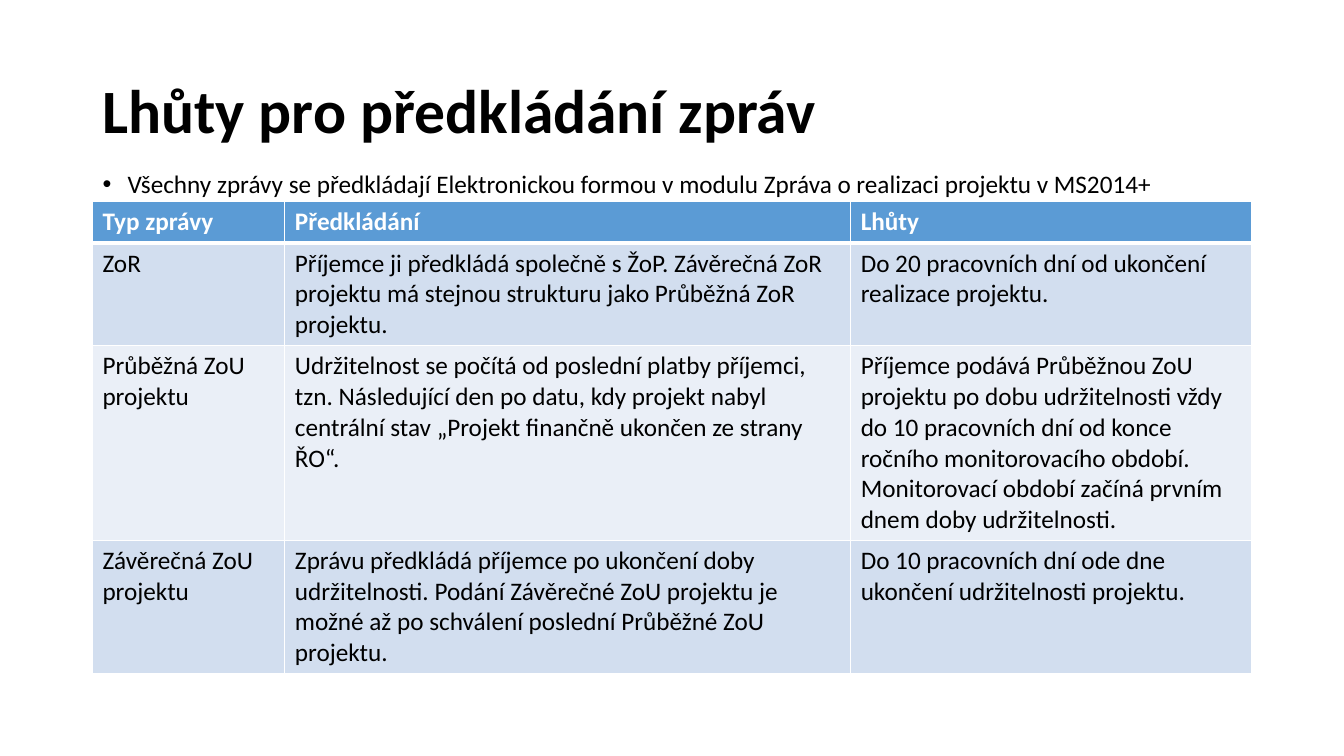
from lxml.etree import SubElement
from pptx import Presentation
from pptx.dml.color import RGBColor as RGB
from pptx.enum.text import MSO_ANCHOR as Anchor, MSO_AUTO_SIZE as AutoSize, PP_ALIGN as Align
from pptx.oxml.ns import qn
from pptx.util import Inches, Pt

COLORS = {"text": "000000", "light": "FFFFFF", "header": "5B9BD5", "odd": "D2DEEF", "even": "EAEFF7"}
FONT = "Calibri"
WIDTH, HEIGHT = Inches(13.33), Inches(7.5)
LEFT, SPAN = 6.88, 86.25
COLUMNS = [14.32, 42.1, 29.83]
ROWS = [5.47, 13.6, 25.7, 17.6]

DEADLINES = [
    ("Typ zprávy", "Předkládání", "Lhůty"),
    ("ZoR",
     "Příjemce ji předkládá společně s ŽoP. Závěrečná ZoR projektu má stejnou strukturu "
     "jako Průběžná ZoR projektu.",
     "Do 20 pracovních dní od ukončení realizace projektu."),
    ("Průběžná ZoU projektu",
     "Udržitelnost se počítá od poslední platby příjemci, tzn. Následující den po datu, "
     "kdy projekt nabyl centrální stav „Projekt finančně ukončen ze strany ŘO“.",
     "Příjemce podává Průběžnou ZoU projektu po dobu udržitelnosti vždy do 10 pracovních dní "
     "od konce ročního monitorovacího období. Monitorovací období začíná prvním dnem doby "
     "udržitelnosti."),
    ("Závěrečná ZoU projektu",
     "Zprávu předkládá příjemce po ukončení doby udržitelnosti. Podání Závěrečné ZoU projektu "
     "je možné až po schválení poslední Průběžné ZoU projektu.",
     "Do 10 pracovních dní ode dne ukončení udržitelnosti projektu."),
]


class SlideBuilder:
    def __init__(self, s):
        self.s = s

    def x(self, percent):
        return int(WIDTH * percent / 100)

    def y(self, percent):
        return int(HEIGHT * percent / 100)

    def box(self, left, top, width, height):
        return self.x(left), self.y(top), self.x(width), self.y(height)

    def run(self, p, text, size=18, color="text", bold=False):
        r = p.add_run()
        r.text = text
        r.font.name, r.font.size, r.font.bold = FONT, Pt(size), bold
        r.font.color.rgb = RGB.from_string(COLORS[color])

    def placeholder(self, index, box, anchor):
        sp = self.s.placeholders[index]
        sp.left, sp.top, sp.width, sp.height = self.box(*box)
        tf = sp.text_frame
        tf.word_wrap, tf.auto_size, tf.vertical_anchor = True, AutoSize.NONE, anchor
        p = tf.paragraphs[0]
        p.alignment, p.line_spacing, p.space_before = Align.LEFT, 0.9, Pt(0)
        return p

    def title(self, text, box):
        self.run(self.placeholder(0, box, Anchor.MIDDLE), text, 44, bold=True)

    def bullet(self, text, box):
        p = self.placeholder(1, box, Anchor.TOP)
        pPr = p._p.get_or_add_pPr()
        pPr.set("marL", str(Inches(0.25)))
        pPr.set("indent", str(Inches(-0.25)))
        SubElement(pPr, qn("a:buFont"), typeface="Arial")
        SubElement(pPr, qn("a:buChar"), char="•")
        self.run(p, text)

    def borders(self, cell, top, bottom):
        tcPr = cell._tc.get_or_add_tcPr()
        for side, width in (("lnL", 1), ("lnR", 1), ("lnT", top), ("lnB", bottom)):
            ln = SubElement(tcPr, qn(f"a:{side}"), w=str(Pt(width)))
            fill = SubElement(ln, qn("a:solidFill"))
            SubElement(fill, qn("a:srgbClr"), val=COLORS["light"])

    def table(self, data, left, top, columns, rows):
        box = self.box(left, top, sum(columns), sum(rows))
        table = self.s.shapes.add_table(len(rows), len(columns), *box).table
        for column, width in zip(table.columns, columns):
            column.width = self.x(width)
        for i, (row, height, texts) in enumerate(zip(table.rows, rows, data)):
            row.height = self.y(height)
            header = i == 0
            fill = "header" if header else "odd" if i % 2 else "even"
            for cell, text in zip(row.cells, texts):
                self.borders(cell, 3 if i == 1 else 1, 3 if header else 1)
                cell.fill.solid()
                cell.fill.fore_color.rgb = RGB.from_string(COLORS[fill])
                p = cell.text_frame.paragraphs[0]
                self.run(p, text, color="light" if header else "text", bold=header)


def main():
    prs = Presentation()
    prs.slide_width, prs.slide_height = WIDTH, HEIGHT
    slide = SlideBuilder(prs.slides.add_slide(prs.slide_layouts[1]))
    slide.title("Lhůty pro předkládání zpráv", (LEFT, 5.33, SPAN, 19.33))
    slide.bullet("Všechny zprávy se předkládají Elektronickou formou v modulu "
                 "Zpráva o realizaci projektu v MS2014+", (LEFT, 22, SPAN, 68.13))
    slide.table(DEADLINES, LEFT, 26.67, COLUMNS, ROWS)
    prs.save("out.pptx")


if __name__ == "__main__":
    main()
